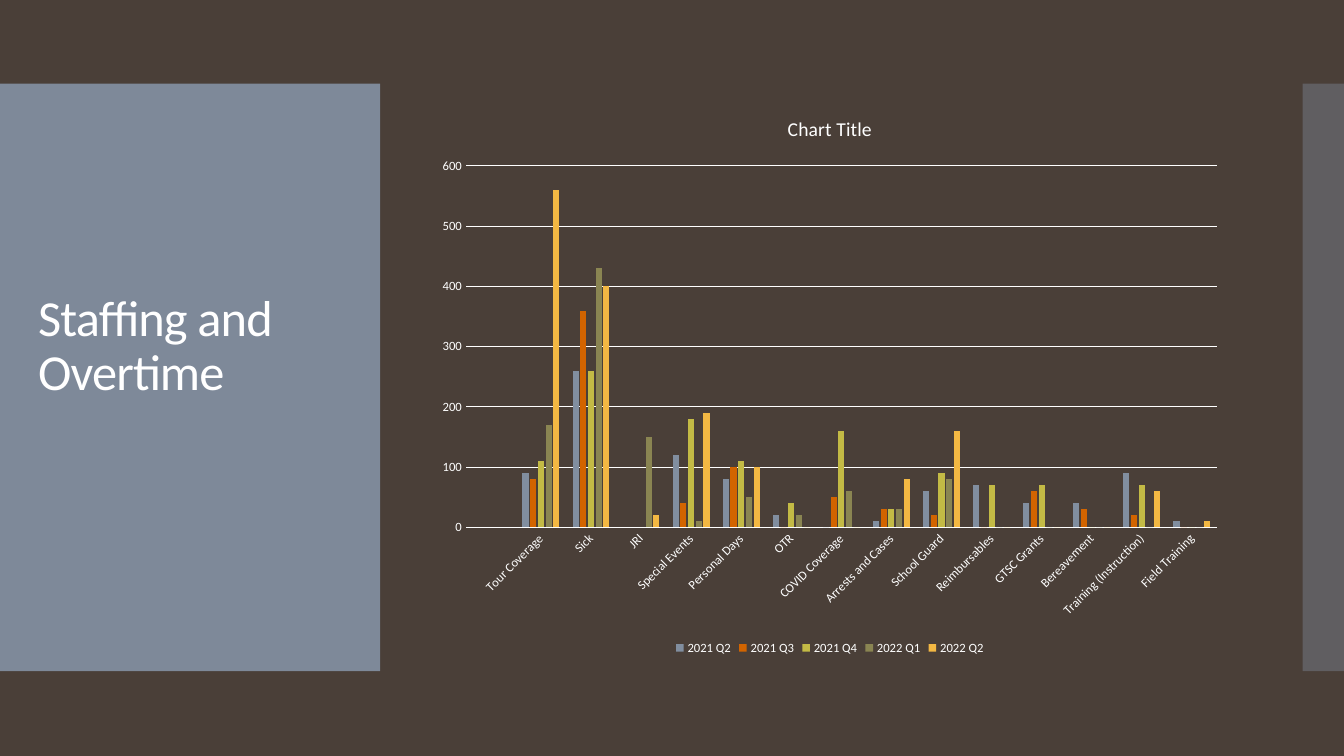
from pptx import Presentation, util as u
from pptx.chart.data import CategoryChartData
from pptx.dml.color import RGBColor
from pptx.enum import chart as ch, shapes, text
from pptx.oxml.ns import qn
from lxml import etree

# Content
TITLE = "Staffing and Overtime"
CHART_TITLE = "Chart Title"
CATEGORIES = ["", "Tour Coverage", "Sick", "JRI", "Special Events", "Personal Days",
              "OTR", "COVID Coverage", "Arrests and Cases", "School Guard",
              "Reimbursables", "GTSC Grants", "Bereavement",
              "Training (Instruction)", "Field Training"]
WHITE = RGBColor(0xFF, 0xFF, 0xFF)
BROWN = RGBColor(0x4A, 0x3F, 0x38)
SLATE = RGBColor(0x81, 0x8E, 0x9F)
ORANGE = RGBColor(0xD2, 0x64, 0x00)
LIME = RGBColor(0xC3, 0xBA, 0x45)
OLIVE = RGBColor(0x8A, 0x85, 0x52)
AMBER = RGBColor(0xF3, 0xB8, 0x43)
SERIES = [
    ("2021 Q2", SLATE, [None, 90, 260, None, 120, 80, 20, 0, 10, 60, 70, 40, 40, 90, 10]),
    ("2021 Q3", ORANGE, [None, 80, 360, None, 40, 100, 0, 50, 30, 20, 0, 60, 30, 20, 0]),
    ("2021 Q4", LIME, [None, 110, 260, None, 180, 110, 40, 160, 30, 90, 70, 70, 0, 70, 0]),
    ("2022 Q1", OLIVE, [None, 170, 430, 150, 10, 50, 20, 60, 30, 80, 0, 0, 0, 0, 0]),
    ("2022 Q2", AMBER, [None, 560, 400, 20, 190, 100, 0, 0, 80, 160, 0, 0, 0, 60, 10]),
]
FONT = "Calibri"
W, H = 13.33, 7.5
BAND_TOP, BAND_H = 0.83, 5.83


def style(font, size):
    font.name, font.size, font.bold = FONT, u.Pt(size), False
    font.color.rgb = WHITE


def add_panel(s, left, width, opacity):
    sp = s.shapes.add_shape(shapes.MSO_SHAPE.RECTANGLE, u.Inches(left), u.Inches(BAND_TOP),
                            u.Inches(width), u.Inches(BAND_H))
    sp.shadow.inherit = False
    sp.fill.solid()
    sp.fill.fore_color.rgb = SLATE
    sp.line.fill.background()
    color = sp._element.spPr.find(qn("a:solidFill"))[0]
    etree.SubElement(color, qn("a:alpha"), val=str(opacity * 1000))


def add_title(s):
    box = s.shapes.add_textbox(u.Inches(0.28), u.Inches(1.23), u.Inches(3.22), u.Inches(5.03))
    tf = box.text_frame
    tf.word_wrap = True
    tf.vertical_anchor = text.MSO_ANCHOR.MIDDLE
    tf.margin_bottom = u.Inches(0.65)
    p = tf.paragraphs[0]
    p.text = TITLE
    p.line_spacing = 0.9
    r = p.runs[0]
    style(r.font, 36)
    r._r.get_or_add_rPr().set("spc", "-60")


def add_overtime_chart(s):
    data = CategoryChartData()
    data.categories = CATEGORIES
    for name, _, values in SERIES:
        data.add_series(name, values)
    chart = s.shapes.add_chart(ch.XL_CHART_TYPE.COLUMN_CLUSTERED, u.Inches(4.23), u.Inches(0.94),
                               u.Inches(8), u.Inches(5.6), data).chart
    style(chart.font, 10)
    chart.has_title = True
    tf = chart.chart_title.text_frame
    tf.text = CHART_TITLE
    style(tf.paragraphs[0].runs[0].font, 14)
    chart.has_legend = True
    chart.legend.position = ch.XL_LEGEND_POSITION.BOTTOM
    chart.legend.include_in_layout = False
    style(chart.legend.font, 9)

    # Columns
    plot = chart.plots[0]
    plot.gap_width, plot.overlap = 219, -27
    plot.vary_by_categories = False
    for series, (_, color, _) in zip(plot.series, SERIES):
        series.format.fill.solid()
        series.format.fill.fore_color.rgb = color
        series.invert_if_negative = False

    # Axes, with automatic rotation of the category labels
    cat, val = chart.category_axis, chart.value_axis
    for axis in (cat, val):
        axis.major_tick_mark = axis.minor_tick_mark = ch.XL_TICK_MARK.NONE
        style(axis.tick_labels.font, 9)
    cat._element.find(qn("c:txPr")).find(qn("a:bodyPr")).set("rot", "-60000000")
    val.minimum_scale, val.maximum_scale, val.major_unit = 0, 600, 100
    val.has_major_gridlines = True
    val.format.line.fill.background()
    for line in (cat.format.line, val.major_gridlines.format.line):
        line.color.rgb = WHITE
        line.width = u.Pt(0.75)


def main():
    prs = Presentation()
    prs.slide_width, prs.slide_height = u.Inches(W), u.Inches(H)
    s = prs.slides.add_slide(prs.slide_layouts[6])
    s.background.fill.solid()
    s.background.fill.fore_color.rgb = BROWN
    add_panel(s, 0, 3.77, 95)
    add_panel(s, W - 0.41, 0.41, 40)
    add_title(s)
    add_overtime_chart(s)
    prs.save("out.pptx")


if __name__ == "__main__":
    main()
